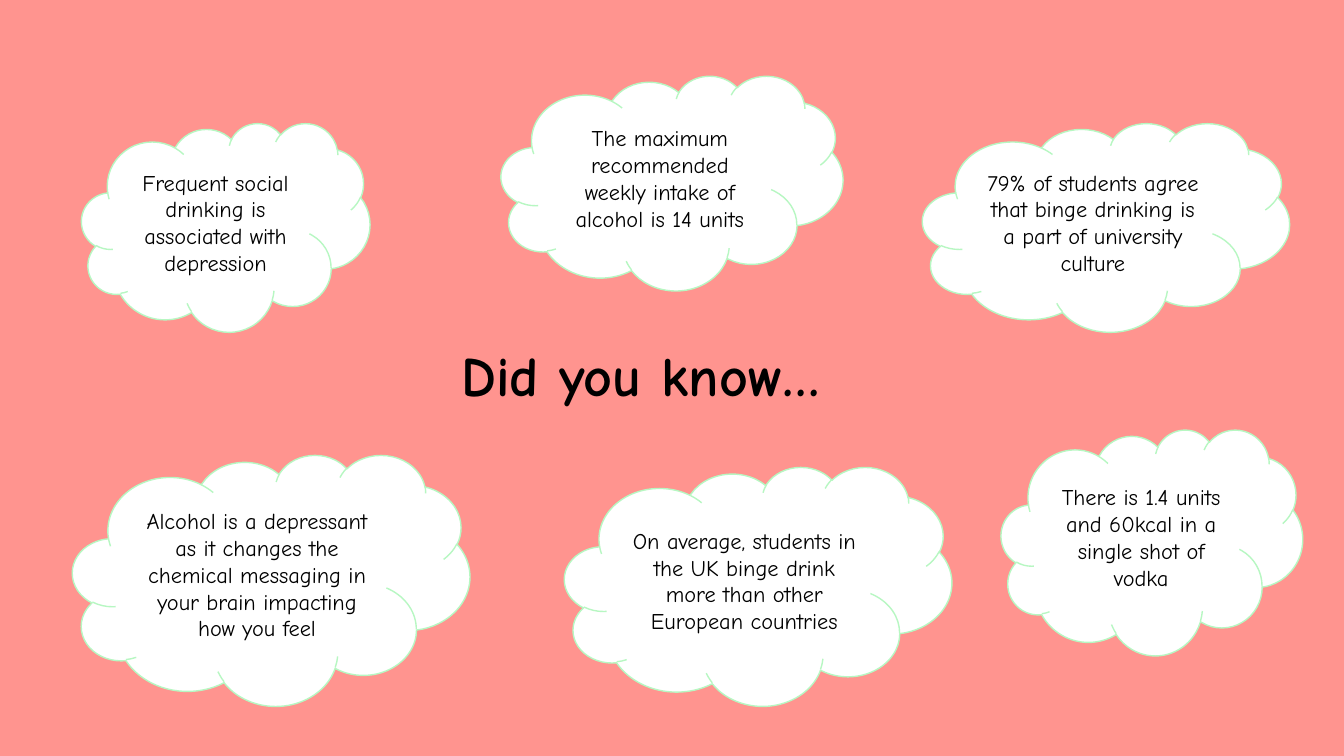
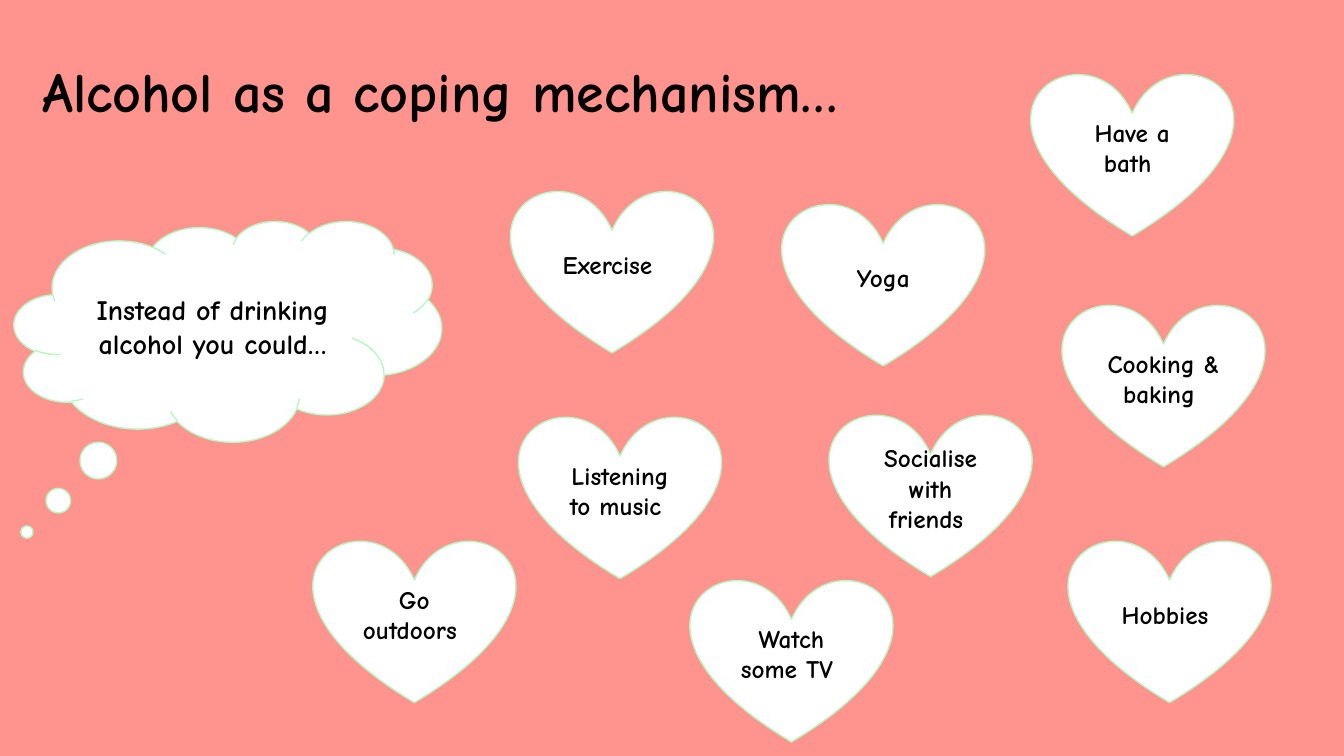
from dataclasses import dataclass

from pptx import Presentation
from pptx.dml.color import RGBColor
from pptx.enum.shapes import MSO_SHAPE
from pptx.enum.text import MSO_ANCHOR, PP_ALIGN
from pptx.shapes.base import BaseShape
from pptx.slide import Slide
from pptx.text.text import TextFrame
from pptx.util import Inches, Length, Pt

FONT = "Comic Neue"
PINK, WHITE, MINT, BLACK = "FF948F", "FFFFFF", "B7F7C2", "000000"
WIDTH, HEIGHT = Inches(13.33), Inches(7.5)
ROWS = 75
CELL = HEIGHT / ROWS  # square grid cells
HEART_W, HEART_H = 20, 16.2


@dataclass(frozen=True)
class Box:
    """A place on the grid, in columns and rows."""
    col: float
    row: float
    wide: float
    high: float

    def lengths(self) -> list[Length]:
        return [Length(round(n * CELL)) for n in (self.col, self.row, self.wide, self.high)]


@dataclass(frozen=True)
class Bubble:
    text: str
    box: Box
    kind: MSO_SHAPE = MSO_SHAPE.CLOUD
    size: int = 16
    bold: bool = False
    tail: tuple[float, ...] = ()


def heart(text: str, col: float, row: float) -> Bubble:
    return Bubble(text, Box(col, row, HEART_W, HEART_H), MSO_SHAPE.HEART, 18, True)


FACTS = [
    Bubble("Frequent social drinking is associated with depression",
           Box(8.1, 12.2, 28.6, 20.7)),
    Bubble("The maximum recommended weekly intake of alcohol is 14 units",
           Box(49.7, 7.5, 33.9, 21.3)),
    Bubble("Alcohol is a depressant as it changes the chemical messaging in "
           "your brain impacting how you feel", Box(7.2, 45.1, 39.4, 24.9)),
    Bubble("79% of students agree that binge drinking is a part of university culture",
           Box(91.5, 12.2, 36.4, 20.7)),
    Bubble("There is 1.4 units and 60kcal in a single shot of vodka",
           Box(99.3, 42.6, 29.9, 22.4)),
    Bubble("On average, students in the UK binge drink more than other European countries",
           Box(56, 46.3, 38.4, 23.7)),
]

IDEAS = [
    heart("Exercise ", 50.7, 18.8),
    heart("Yoga", 77.6, 20.1),
    heart("Listening to music ", 51.5, 41.2),
    heart("Socialise with friends ", 82.3, 41),
    heart("Cooking & baking ", 105.4, 30.1),
    heart("Have a bath ", 102.3, 7.2),
    heart("Go outdoors ", 31.1, 53.5),
    heart("Hobbies ", 106, 53.5),
    heart("Watch some TV ", 68.5, 57.4),
    Bubble("Instead of drinking alcohol you could…", Box(1.4, 21.9, 42.4, 21.9),
           MSO_SHAPE.CLOUD_CALLOUT, 20, True, (-0.47, 0.91)),
]

PAGES = [
    ("Did you know…", Box(44.8, 31.1, 47.6, 12.8), FACTS),
    ("Alcohol as a coping mechanism…", Box(3.2, 2.1, 115, 14.5), IDEAS),
]


def tint(code: str) -> RGBColor:
    return RGBColor.from_string(code)


def write(frame: TextFrame, text: str, size: int, bold: bool,
          align: PP_ALIGN, space: float = 1.0) -> None:
    frame.word_wrap = True
    frame.vertical_anchor = MSO_ANCHOR.MIDDLE
    para = frame.paragraphs[0]
    para.alignment = align
    para.line_spacing = space
    run = para.add_run()
    run.text = text
    run.font.name = FONT
    run.font.size = Pt(size)
    run.font.bold = bold
    run.font.color.rgb = tint(BLACK)


def add_title(slide: Slide, text: str, box: Box) -> None:
    label = slide.shapes.add_textbox(*box.lengths())
    write(label.text_frame, text, 40, True, PP_ALIGN.LEFT, 0.9)


def add_bubble(slide: Slide, item: Bubble) -> BaseShape:
    shape = slide.shapes.add_shape(item.kind, *item.box.lengths())
    for spot, share in enumerate(item.tail):
        shape.adjustments[spot] = share
    shape.shadow.inherit = False
    shape.fill.solid()
    shape.fill.fore_color.rgb = tint(WHITE)
    shape.line.color.rgb = tint(MINT)
    shape.line.width = Pt(1)
    write(shape.text_frame, item.text, item.size, item.bold, PP_ALIGN.CENTER)
    return shape


def main() -> None:
    deck = Presentation()
    deck.slide_width, deck.slide_height = WIDTH, HEIGHT
    back = deck.slide_master.background.fill
    back.solid()
    back.fore_color.rgb = tint(PINK)
    blank = deck.slide_layouts[6]
    for title, box, items in PAGES:
        slide = deck.slides.add_slide(blank)
        add_title(slide, title, box)
        for item in items:
            add_bubble(slide, item)
    deck.save("out.pptx")


if __name__ == "__main__":
    main()
